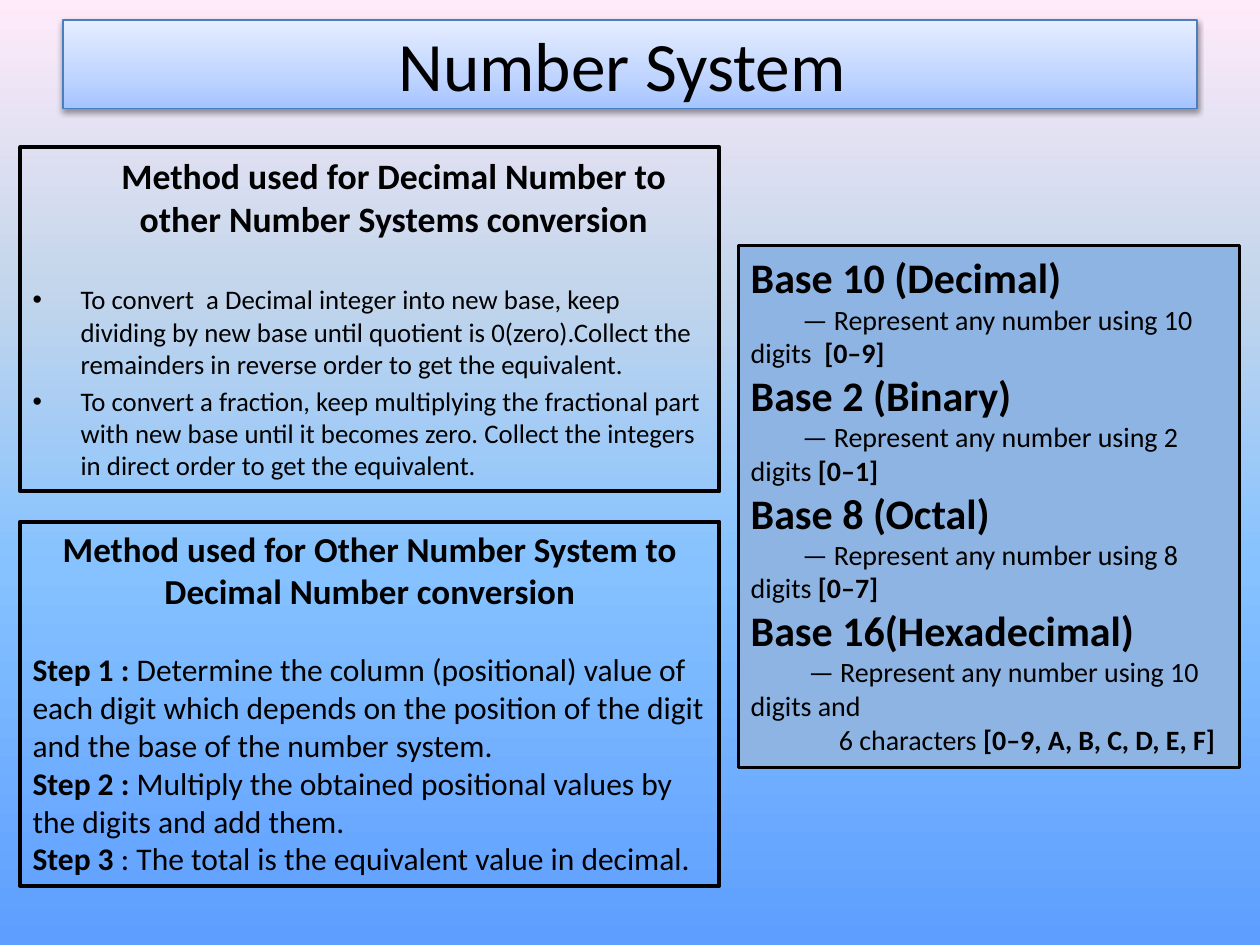
from lxml import etree
from pptx import Presentation
from pptx.dml.color import RGBColor
from pptx.enum.text import MSO_ANCHOR, MSO_AUTO_SIZE, PP_ALIGN
from pptx.oxml import parse_xml
from pptx.oxml.ns import qn
from pptx.util import Inches, Pt

CENTER, LEFT = PP_ALIGN.CENTER, PP_ALIGN.LEFT
MIDDLE, TOP = MSO_ANCHOR.MIDDLE, MSO_ANCHOR.TOP
NO_FIT = MSO_AUTO_SIZE.NONE
NS = "http://schemas.openxmlformats.org/drawingml/2006/main"
COLORS = {"text": "000000", "title_line": "4B7EBC", "panel": "8EB4E3"}
BG_STOPS = [(0, "5E9EFF"), (40, "85C2FF"), (70, "C4D6EB"), (100, "FFEBFA")]
TITLE_STOPS = [(0, "A4C4FF"), (35, "BFD4FF"), (100, "E6EEFF")]


def set_gradient(fill, parent, stops):
    fill.gradient()
    grad = next(parent.iter(qn("a:gradFill")))
    gs = "".join(f'<a:gs pos="{pos * 1000}"><a:srgbClr val="{color}"/></a:gs>' for pos, color in stops)
    grad.getparent().replace(grad, parse_xml(
        f'<a:gradFill xmlns:a="{NS}" rotWithShape="1"><a:gsLst>{gs}</a:gsLst>'
        '<a:lin ang="16200000" scaled="0"/></a:gradFill>'))


def add_paragraph(tf, runs, size, align=LEFT, before=0, margin=0, indent=0):
    p = tf.paragraphs[0]
    if p.runs:
        p = tf.add_paragraph()
    p.alignment = align
    p.space_before = Pt(before)
    pPr = p._p.get_or_add_pPr()
    pPr.set("marL", str(Inches(margin)))
    pPr.set("indent", str(Inches(indent)))
    if indent >= 0:
        etree.SubElement(pPr, qn("a:buNone"))
    for text, bold in runs:
        r = p.add_run()
        r.text = text
        r.font.name = "Calibri"
        r.font.size = Pt(size)
        r.font.bold = bold
        r.font.color.rgb = RGBColor.from_string(COLORS["text"])


prs = Presentation()
prs.slide_width, prs.slide_height = Inches(10), Inches(7.5)
s = prs.slides.add_slide(prs.slide_layouts[1])
set_gradient(s.background.fill, s._element, BG_STOPS)

title, to_other = s.placeholders
bases = s.shapes.add_textbox(0, 0, 0, 0)
to_decimal = s.shapes.add_textbox(0, 0, 0, 0)

frames = [
    (title, 0.5, 0.16, 9, 0.7, "title_line", 0.75, MIDDLE),
    (bases, 5.86, 1.95, 3.98, 4.14, "text", 1.5, TOP),
    (to_decimal, 0.16, 4.14, 5.55, 2.89, "text", 2.25, TOP),
    (to_other, 0.16, 1.17, 5.55, 2.73, "text", 2.25, TOP),
]
for sp, x, y, w, h, line, width, anchor in frames:
    sp.left, sp.top, sp.width, sp.height = Inches(x), Inches(y), Inches(w), Inches(h)
    sp.line.color.rgb = RGBColor.from_string(COLORS[line])
    sp.line.width = Pt(width)
    tf = sp.text_frame
    tf.word_wrap = True
    tf.auto_size = NO_FIT
    tf.vertical_anchor = anchor

set_gradient(title.fill, title._element, TITLE_STOPS)
title._element.spPr.append(parse_xml(
    f'<a:effectLst xmlns:a="{NS}"><a:outerShdw blurRad="{Pt(3.1)}" dist="{Pt(1.6)}" dir="5400000" '
    'rotWithShape="0"><a:srgbClr val="000000"><a:alpha val="38000"/></a:srgbClr></a:outerShdw></a:effectLst>'))
add_paragraph(title.text_frame, [("Number System ", False)], 39.6, CENTER)

bases.fill.solid()
bases.fill.fore_color.rgb = RGBColor.from_string(COLORS["panel"])
tf = bases.text_frame
for heading, digits, symbols, indent in [
    ("Base 10 (Decimal)", "10 digits  ", "[0–9]", 0.41),
    ("Base 2 (Binary)", "2 digits ", "[0–1]", 0.41),
    ("Base 8 (Octal)", "8 digits ", "[0–7]", 0.41),
    ("Base 16(Hexadecimal)", "10 digits and", "", 0.46),
]:
    add_paragraph(tf, [(heading, True)], 24)
    runs = [("— Represent any number using " + digits, False)]
    if symbols:
        runs.append((symbols, True))
    add_paragraph(tf, runs, 16, indent=indent)
add_paragraph(tf, [("6 characters ", False), ("[0–9, A, B, C, D, E, F]", True)], 16, indent=0.7)

tf = to_decimal.text_frame
add_paragraph(tf, [("Method used for Other Number System to Decimal Number conversion", True)], 20, CENTER)
for label, text, before in [
    ("Step 1 :", " Determine the column (positional) value of each digit which depends on "
     "the position of the digit and the base of the number system.", 22),
    ("Step 2 :", " Multiply the obtained positional values by the digits and add them.", 0),
    ("Step 3", " : The total is the equivalent value in decimal.", 0),
]:
    add_paragraph(tf, [(label, True), (text, False)], 18, before=before)

tf = to_other.text_frame
add_paragraph(tf, [("Method used for Decimal Number to other Number Systems conversion", True)],
              20.4, CENTER, margin=0.38)
for text, before in [
    ("To convert  a Decimal integer into new base, keep dividing by new base until quotient is "
     "0(zero).Collect the remainders in reverse order to get the equivalent.", 25),
    ("To convert a fraction, keep multiplying the fractional part with new base until it becomes "
     "zero. Collect the integers in direct order to get the equivalent.", 3),
]:
    add_paragraph(tf, [(text, False)], 15.3, before=before, margin=0.38, indent=-0.38)

prs.save("out.pptx")
